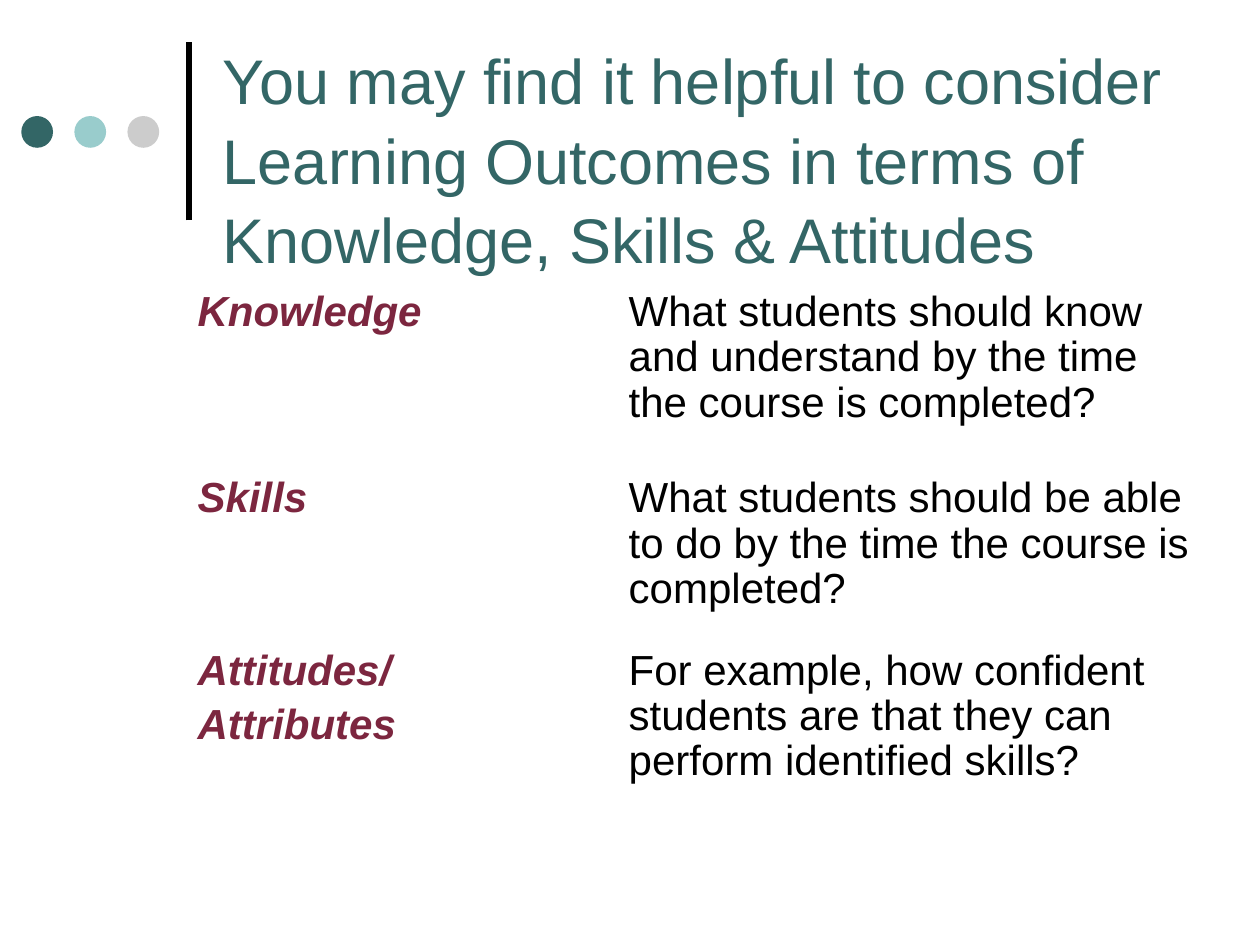
import copy

import pptx
import pptx.dml.color
import pptx.enum.shapes
import pptx.enum.text
import pptx.oxml
import pptx.oxml.ns
import pptx.util

Cm = pptx.util.Cm
Pt = pptx.util.Pt

COLORS = {
    "teal": "336666",
    "aqua": "99CCCC",
    "grey": "CCCCCC",
    "label": "7C263F",
    "text": "000000",
}

TITLE = ("You may find it helpful to consider\v"
         "Learning Outcomes in terms of\v"
         "Knowledge, Skills & Attitudes")

# Row height in cm, label, question
OUTCOMES = [
    (3.76, "Knowledge",
     "What students should know and understand by the time the course is completed?"),
    (3.47, "Skills",
     "What students should be able to do by the time the course is completed?"),
    (4.53, "Attitudes/\nAttributes",
     "For example, how confident students are that they can perform identified skills?"),
]


def color(name):
    return pptx.dml.color.RGBColor.from_string(COLORS[name])


def write_text(frame, text, size, color_name, bold=False, italic=False,
               line_spacing=1.0, space_before=0):
    """Fill a text frame; a newline starts a paragraph, a vertical tab a line."""
    frame.word_wrap = True
    frame.text = text
    for index, paragraph in enumerate(frame.paragraphs):
        paragraph.alignment = pptx.enum.text.PP_ALIGN.LEFT
        paragraph.line_spacing = line_spacing
        paragraph.space_before = Pt(space_before if index else 0)
        for run in paragraph.runs:
            run.font.name = "Arial"
            run.font.size = Pt(size)
            run.font.bold = bold
            run.font.italic = italic
            run.font.color.rgb = color(color_name)
        # Line breaks take the format of the text around them
        for line_break in paragraph._p.findall(pptx.oxml.ns.qn("a:br")):
            line_break.append(copy.deepcopy(paragraph.runs[0]._r.rPr))


def add_ornament(slide, left, top, width, height):
    """Three dots beside a vertical rule on the right edge of the box."""
    rule = slide.shapes.add_connector(
        pptx.enum.shapes.MSO_CONNECTOR.STRAIGHT,
        Cm(left + width), Cm(top + height), Cm(left + width), Cm(top))
    rule.line.color.rgb = color("text")
    rule.line.width = Pt(3)
    rule._element.spPr.append(pptx.oxml.parse_xml(
        "<a:effectLst %s/>" % pptx.oxml.ns.nsdecls("a")))

    diameter, pitch = 0.64, 1.07
    for index, name in enumerate(("teal", "aqua", "grey")):
        dot = slide.shapes.add_shape(
            pptx.enum.shapes.MSO_SHAPE.OVAL,
            Cm(left + index * pitch), Cm(top + 1.5), Cm(diameter), Cm(diameter))
        dot.shadow.inherit = False
        dot.fill.solid()
        dot.fill.fore_color.rgb = color(name)
        dot.line.fill.background()


def place_title(slide, left, top, width, height):
    title = slide.shapes.title
    title.left, title.top = Cm(left), Cm(top)
    title.width, title.height = Cm(width), Cm(height)
    frame = title.text_frame
    frame.auto_size = pptx.enum.text.MSO_AUTO_SIZE.NONE
    frame.vertical_anchor = pptx.enum.text.MSO_ANCHOR.TOP
    write_text(frame, TITLE, size=36, color_name="teal", line_spacing=1.05)


def add_outcomes(slide, left, top, width, height):
    """Unruled table: outcome type on the left, its question on the right."""
    table = slide.shapes.add_table(
        len(OUTCOMES), 2, Cm(left), Cm(top), Cm(width), Cm(height)).table
    table.first_row = False
    table.horz_banding = False
    label_width = 8.69
    table.columns[0].width = Cm(label_width)
    table.columns[1].width = Cm(width - label_width)

    for row, (row_height, label, question) in enumerate(OUTCOMES):
        table.rows[row].height = Cm(row_height)
        label_cell, question_cell = table.cell(row, 0), table.cell(row, 1)
        for cell in (label_cell, question_cell):
            cell.fill.background()
        write_text(label_cell.text_frame, label, size=24, color_name="label",
                   bold=True, italic=True, line_spacing=0.97, space_before=5)
        write_text(question_cell.text_frame, question, size=24,
                   color_name="text", line_spacing=0.97)


def main():
    presentation = pptx.Presentation()
    presentation.slide_width = Cm(25.4)
    presentation.slide_height = Cm(19.05)
    slide = presentation.slides.add_slide(presentation.slide_layouts[5])

    add_ornament(slide, left=0.43, top=0.84, width=3.38, height=3.6)
    place_title(slide, left=4.24, top=0.64, width=22.86, height=3.18)
    add_outcomes(slide, left=3.73, top=5.72, width=20.83, height=11.76)

    presentation.save("out.pptx")


if __name__ == "__main__":
    main()
